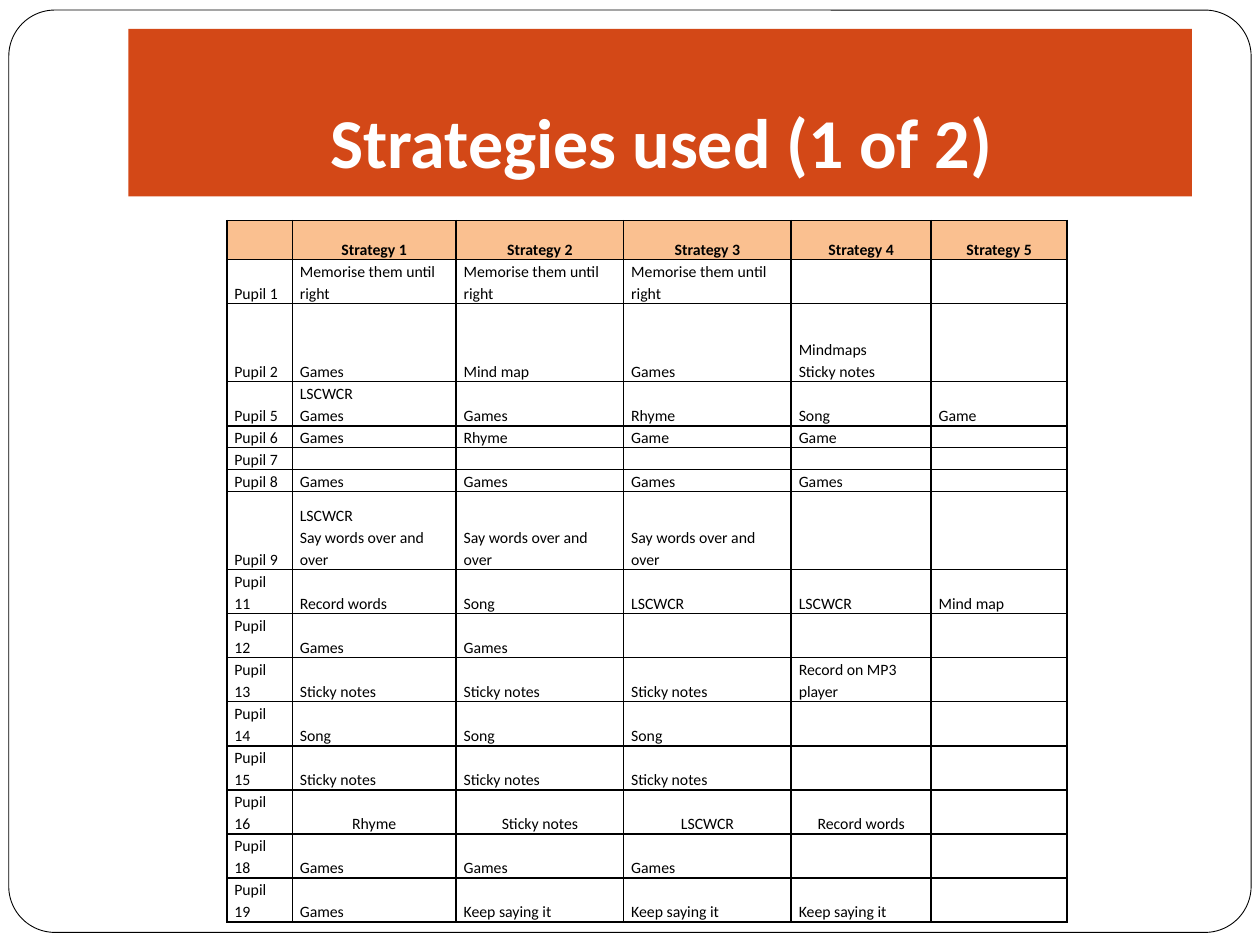
from lxml import etree
from pptx import Presentation
from pptx.dml.color import RGBColor
from pptx.enum.shapes import MSO_SHAPE
from pptx.enum.text import MSO_ANCHOR, PP_ALIGN
from pptx.oxml.ns import qn
from pptx.util import Inches, Pt

RECTANGLE = MSO_SHAPE.RECTANGLE
ROUNDED = MSO_SHAPE.ROUNDED_RECTANGLE
BOTTOM = MSO_ANCHOR.BOTTOM
LEFT, CENTER = PP_ALIGN.LEFT, PP_ALIGN.CENTER

FONT = "Calibri"
BLACK, WHITE = "000000", "FFFFFF"
BAND_FILL, HEADER_FILL = "D34817", "FAC090"
CELL_SIZE = 9

COLUMN_WIDTHS = [0.52, 1.3, 1.33, 1.33, 1.11, 1.08]
ONE_LINE, TWO_LINES, HEADER_HEIGHT, TALL = 0.17, 0.35, 0.31, 0.62
CENTERED_PUPIL = "Pupil 16"

MEMORISE = "Memorise them until right"
REPEAT = "Say words over and over"
STICKY = "Sticky notes"
SAYING = "Keep saying it"

# Row height, then the cells from the left; missing cells stay empty.
ROWS = [
    (HEADER_HEIGHT, ["", *(f"Strategy {number}" for number in range(1, 6))]),
    (TWO_LINES, ["Pupil 1", MEMORISE, MEMORISE, MEMORISE]),
    (TALL, ["Pupil 2", "Games", "Mind map", "Games", f"Mindmaps\n{STICKY}"]),
    (TWO_LINES, ["Pupil 5", "LSCWCR\nGames", "Games", "Rhyme", "Song", "Game"]),
    (ONE_LINE, ["Pupil 6", "Games", "Rhyme", "Game", "Game"]),
    (ONE_LINE, ["Pupil 7"]),
    (ONE_LINE, ["Pupil 8", "Games", "Games", "Games", "Games"]),
    (TALL, ["Pupil 9", f"LSCWCR\n{REPEAT}", REPEAT, REPEAT]),
    (TWO_LINES, ["Pupil 11", "Record words", "Song", "LSCWCR", "LSCWCR", "Mind map"]),
    (TWO_LINES, ["Pupil 12", "Games", "Games"]),
    (TWO_LINES, ["Pupil 13", STICKY, STICKY, STICKY, "Record on MP3 player"]),
    (TWO_LINES, ["Pupil 14", "Song", "Song", "Song"]),
    (TWO_LINES, ["Pupil 15", STICKY, STICKY, STICKY]),
    (TWO_LINES, [CENTERED_PUPIL, "Rhyme", STICKY, "LSCWCR", "Record words"]),
    (TWO_LINES, ["Pupil 18", "Games", "Games", "Games"]),
    (TWO_LINES, ["Pupil 19", "Games", SAYING, SAYING, SAYING]),
]


def color(hex_string):
    return RGBColor.from_string(hex_string)


def style_paragraph(paragraph, size, hex_string, bold, alignment):
    paragraph.alignment = alignment
    font = paragraph.font
    font.name, font.size, font.bold = FONT, Pt(size), bold
    font.color.rgb = color(hex_string)


def add_panel(slide, kind, box, fill, line=None):
    shape = slide.shapes.add_shape(kind, *map(Inches, box))
    shape.shadow.inherit = False
    shape.fill.solid()
    shape.fill.fore_color.rgb = color(fill)
    if line:
        shape.line.color.rgb = color(line)
        shape.line.width = Pt(0.5)
    else:
        shape.line.fill.background()
    return shape


def add_title(slide, text, box):
    frame = slide.shapes.add_textbox(*map(Inches, box)).text_frame
    frame.word_wrap = True
    frame.vertical_anchor = BOTTOM
    frame.margin_bottom = Inches(0.1)
    paragraph = frame.paragraphs[0]
    paragraph.text = text
    style_paragraph(paragraph, 40, WHITE, True, CENTER)


def add_borders(cell):
    properties = cell._tc.get_or_add_tcPr()
    for side in ("a:lnL", "a:lnR", "a:lnT", "a:lnB"):
        line = etree.SubElement(properties, qn(side), w=str(Pt(1)))
        fill = etree.SubElement(line, qn("a:solidFill"))
        etree.SubElement(fill, qn("a:srgbClr"), val=BLACK)


def fill_cell(cell, text, is_header, alignment):
    add_borders(cell)
    if is_header:
        cell.fill.solid()
        cell.fill.fore_color.rgb = color(HEADER_FILL)
    else:
        cell.fill.background()
    cell.vertical_anchor = BOTTOM
    cell.margin_left = cell.margin_right = Inches(0.06)
    cell.margin_top = cell.margin_bottom = 0
    paragraph = cell.text_frame.paragraphs[0]
    paragraph.text = text
    paragraph.line_spacing = 1.15
    style_paragraph(paragraph, CELL_SIZE, BLACK, is_header, alignment)
    if not text:  # keeps an empty cell from stretching its row
        etree.SubElement(paragraph._p, qn("a:endParaRPr"), sz=str(CELL_SIZE * 100))


def add_strategy_table(slide, left, top):
    width = sum(COLUMN_WIDTHS)
    height = sum(row_height for row_height, _ in ROWS)
    table = slide.shapes.add_table(
        len(ROWS), len(COLUMN_WIDTHS), *map(Inches, (left, top, width, height))
    ).table
    table.horz_banding = False
    for column, column_width in zip(table.columns, COLUMN_WIDTHS):
        column.width = Inches(column_width)
    for row_index, (row_height, texts) in enumerate(ROWS):
        row = table.rows[row_index]
        row.height = Inches(row_height)
        is_header = row_index == 0
        centered = is_header or texts[0] == CENTERED_PUPIL
        for column_index, cell in enumerate(row.cells):
            text = texts[column_index] if column_index < len(texts) else ""
            alignment = CENTER if centered and column_index else LEFT
            fill_cell(cell, text, is_header, alignment)


def main():
    presentation = Presentation()
    presentation.slide_width, presentation.slide_height = Inches(10), Inches(7.5)
    slide = presentation.slides.add_slide(presentation.slide_layouts[6])

    frame = add_panel(slide, ROUNDED, (0.07, 0.08, 9.86, 7.32), WHITE, BLACK)
    frame.adjustments[0] = 0.05
    add_panel(slide, RECTANGLE, (1.02, 0.23, 8.44, 1.33), BAND_FILL)
    add_title(slide, "Strategies used (1 of 2)", (1, 0.3, 8.5, 1.25))
    add_strategy_table(slide, 1.8, 1.75)

    presentation.save("out.pptx")


if __name__ == "__main__":
    main()
